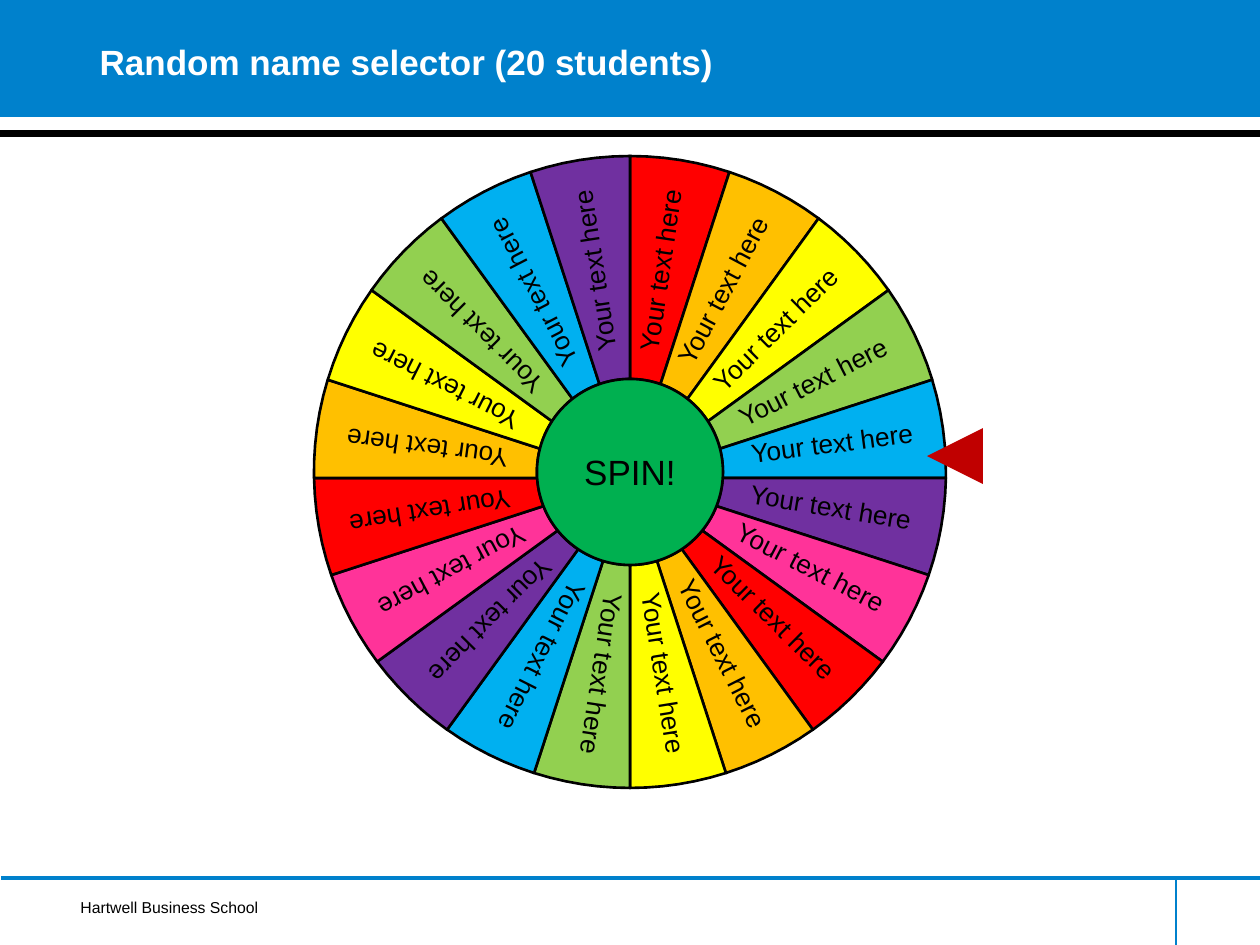
from dataclasses import dataclass
from itertools import cycle
from math import cos, radians, sin, sqrt

from lxml.etree import SubElement
from pptx import Presentation
from pptx.dml.color import RGBColor
from pptx.enum.shapes import MSO_CONNECTOR as Connector, MSO_SHAPE as Preset
from pptx.enum.text import MSO_ANCHOR as Anchor, MSO_AUTO_SIZE as AutoSize, PP_ALIGN as Align
from pptx.oxml.ns import qn
from pptx.util import Inches, Pt

PX = Inches(1) / 126
CENTER_X, CENTER_Y = 630, 472
RAY_OFFSET = 6  # the dividing rays meet this far below the centre
RIM, HUB, LABEL_RING = 316, 93, 204
STEP = 18
ARC_PARTS = 6
BLUE, BLACK, WHITE = "0081CC", "000000", "FFFFFF"
SLICE_COLORS = ["FF0000", "FFC000", "FFFF00", "92D050", "00B0F0", "7030A0", "FF3399"]
LABEL_TILTS = [278.3, 298, 315.4, 332.9, 352.5, 9.5, 27.3, 44.6, 63.2, 80.9,
               98.7, 116.7, 134.6, 152, 170.8, 187.6, 206.8, 224.8, 242.5, 261.2]


@dataclass
class Rule:
    start: tuple[int, int]
    end: tuple[int, int]
    color: str
    width: float


@dataclass
class Slice:
    angle: float
    color: str
    tilt: float
    label: str = "Your text here"


RULES = [
    Rule((0, 134), (1260, 134), BLACK, 4),
    Rule((1, 878), (1261, 878), BLUE, 2),
    Rule((1176, 878), (1176, 945), BLUE, 1),
]
SLICES = [Slice(index * STEP - 90, color, tilt)
          for index, (color, tilt) in enumerate(zip(cycle(SLICE_COLORS), LABEL_TILTS))]


def emu(px: float) -> int:
    return round(px * PX)


def rgb(color: str) -> RGBColor:
    return RGBColor.from_string(color)


def ring_point(angle: float, radius: int) -> tuple[float, float]:
    """Where the ray at this angle crosses a circle around the wheel centre."""
    dx, dy = cos(radians(angle)), sin(radians(angle))
    reach = sqrt(radius ** 2 - (RAY_OFFSET * dx) ** 2) - RAY_OFFSET * dy
    return CENTER_X + reach * dx, CENTER_Y + RAY_OFFSET + reach * dy


def paint(shape, fill: str, outline: str | None = None) -> None:
    shape.shadow.inherit = False
    shape.fill.solid()
    shape.fill.fore_color.rgb = rgb(fill)
    if outline:
        shape.line.color.rgb = rgb(outline)
        shape.line.width = Pt(1.5)
    else:
        shape.line.fill.background()


def write(shape, text: str, size: int, color: str = BLACK, align=Align.CENTER,
          bold: bool = False, **frame_format) -> None:
    frame = shape.text_frame
    for name, value in frame_format.items():
        setattr(frame, name, value)
    para = frame.paragraphs[0]
    para.alignment = align
    span = para.add_run()
    span.text = text
    for name, value in {"name": "Arial", "size": Pt(size), "bold": bold}.items():
        setattr(span.font, name, value)
    span.font.color.rgb = rgb(color)


def add_preset(page, preset, left: int, top: int, width: int, height: int,
               fill: str, outline: str | None = None):
    shape = page.shapes.add_shape(preset, emu(left), emu(top), emu(width), emu(height))
    paint(shape, fill, outline)
    return shape


def add_rule(page, rule: Rule) -> None:
    line = page.shapes.add_connector(
        Connector.STRAIGHT, *(emu(px) for px in rule.start + rule.end))
    line.line.color.rgb = rgb(rule.color)
    line.line.width = Pt(rule.width)
    SubElement(line.element.spPr, qn("a:effectLst"))


def add_slice(page, part: Slice) -> None:
    angles = [part.angle + STEP * step / ARC_PARTS for step in range(ARC_PARTS + 1)]
    outline = [ring_point(angle, RIM) for angle in angles]
    outline += [ring_point(angle, HUB) for angle in reversed(angles)]
    first, *others = [(emu(x), emu(y)) for x, y in outline]
    builder = page.shapes.build_freeform(*first, scale=1.0)
    builder.add_line_segments(others, close=True)
    paint(builder.convert_to_shape(), part.color, BLACK)


def add_slice_label(page, part: Slice) -> None:
    width, height = 223, 38
    x, y = ring_point(part.angle + STEP / 2, LABEL_RING)
    box = page.shapes.add_textbox(
        emu(x - width / 2), emu(y - height / 2), emu(width), emu(height))
    box.rotation = part.tilt
    write(box, part.label, 15, word_wrap=False, margin_left=0, margin_right=0,
          margin_top=0, margin_bottom=0)


def main() -> None:
    deck = Presentation()
    deck.slide_width, deck.slide_height = emu(1260), emu(945)
    page = deck.slides.add_slide(deck.slide_layouts[5])

    add_preset(page, Preset.RECTANGLE, 0, 0, 1260, 117, BLUE)
    for rule in RULES:
        add_rule(page, rule)
    footer = page.shapes.add_textbox(emu(68), emu(892), emu(222), emu(32))
    write(footer, "Hartwell Business School", 9, align=Align.LEFT, word_wrap=False,
          auto_size=AutoSize.SHAPE_TO_FIT_TEXT)

    for part in SLICES:
        add_slice(page, part)
    for part in SLICES:
        add_slice_label(page, part)
    hub = add_preset(page, Preset.OVAL, CENTER_X - HUB, CENTER_Y - HUB, 2 * HUB, 2 * HUB,
                     "00B050", BLACK)
    write(hub, "SPIN!", 20, vertical_anchor=Anchor.MIDDLE)
    pointer = add_preset(page, Preset.ISOSCELES_TRIANGLE, 927, 428, 56, 56, "C00000")
    pointer.rotation = 270

    title = page.shapes.title
    place = {"left": 87, "top": -18, "width": 1134, "height": 158}
    for name, px in place.items():
        setattr(title, name, emu(px))
    write(title, "Random name selector (20 students)", 20, WHITE, Align.LEFT, True,
          vertical_anchor=Anchor.MIDDLE, auto_size=AutoSize.NONE)
    title.element.getparent().append(title.element)  # in front of the band

    deck.save("out.pptx")


if __name__ == "__main__":
    main()
